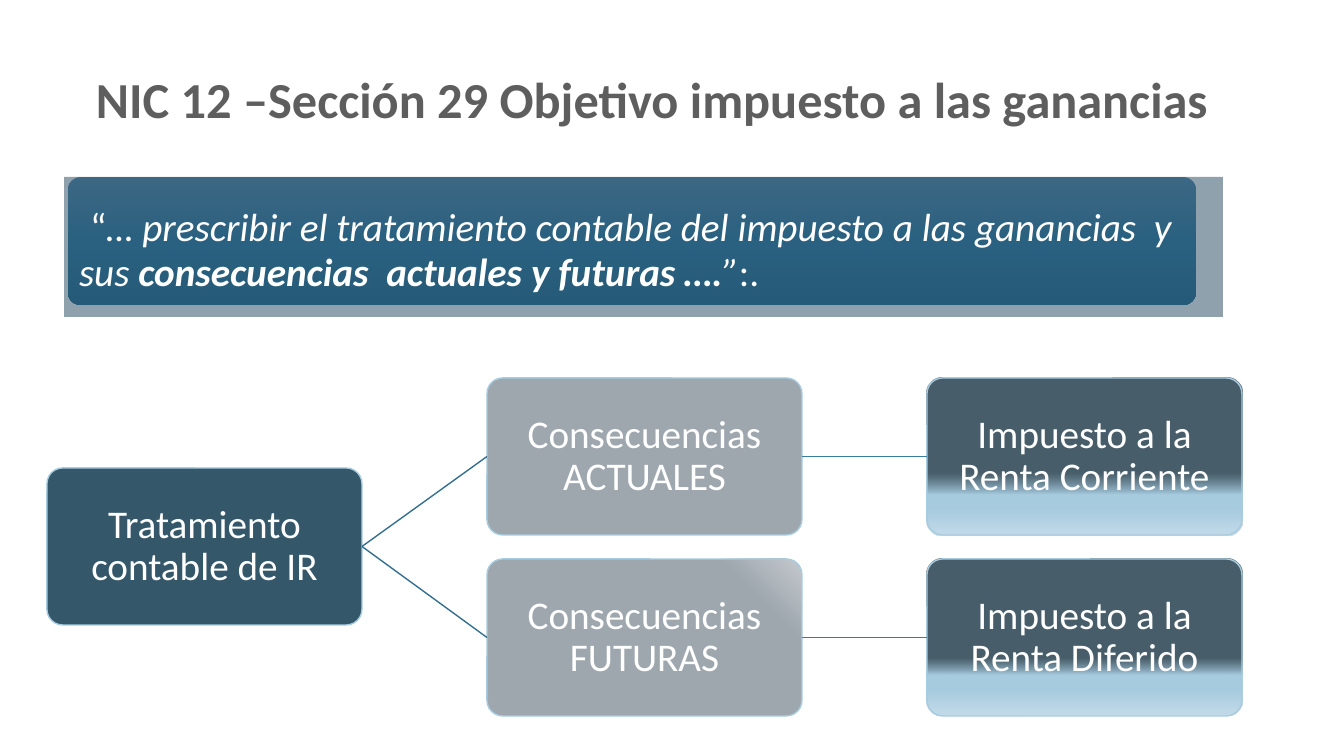
import pptx
import pptx.dml.color
import pptx.enum.shapes
import pptx.enum.text
import pptx.oxml
import pptx.oxml.ns
import pptx.util

PX = 12192000 / 1344  # EMU in one px
THEME = {
    "font": "Calibri",
    "title_size": 36, "lead_size": 35, "body_size": 28,
    "title": "5E5E5E", "white": "FFFFFF",
    "border": "A7CBDF", "branch": "346F8F", "link": "3B7DA2",
    # Fills: stops of (percent, colour, opacity percent)
    "root": [(0, "20455A", 90)],
    "overlay": [(0, "20455A", 50)],
    "banner": [(0, "5A8CAE", 100), (50, "367EA7", 100), (100, "2B7299", 100)],
    "current": [(0, "9EA6AE", 100)],
    "future": [(82, "9EA6AE", 100), (100, "C4C9CD", 100)],
    "current_tax": [(60, "183342", 79), (74, "A7CBDF", 100), (83, "A7CBDF", 100), (100, "C4DCEA", 100)],
    "deferred_tax": [(63, "183342", 79), (74, "A7CBDF", 100), (83, "A7CBDF", 100), (100, "C4DCEA", 100)],
}
ROUNDED = pptx.enum.shapes.MSO_SHAPE.ROUNDED_RECTANGLE
RECTANGLE = pptx.enum.shapes.MSO_SHAPE.RECTANGLE
LEFT, CENTER = pptx.enum.text.PP_ALIGN.LEFT, pptx.enum.text.PP_ALIGN.CENTER


def write_text(shape, *runs, size=THEME["body_size"], color=THEME["white"],
               bold=False, align=LEFT, inset_x=10, inset_y=5):
    """Write one paragraph; each run is (text, font overrides)."""
    frame = shape.text_frame
    frame.word_wrap = True
    frame.vertical_anchor = pptx.enum.text.MSO_ANCHOR.MIDDLE
    frame.margin_left = frame.margin_right = round(inset_x * PX)
    frame.margin_top = frame.margin_bottom = round(inset_y * PX)
    paragraph = frame.paragraphs[0]
    paragraph.alignment = align
    paragraph.line_spacing = 0.9
    for text, overrides in runs:
        run = paragraph.add_run()
        run.text = text
        run.font.name = THEME["font"]
        run.font.size = pptx.util.Pt(overrides.get("size", size))
        run.font.bold = overrides.get("bold", bold)
        run.font.italic = overrides.get("italic", False)
        run.font.color.rgb = pptx.dml.color.RGBColor.from_string(color)


def add_panel(kind, left, top, width, height, stops, angle=90, border=None):
    """Add a shape with a solid (one stop) or gradient fill."""
    shape = slide.shapes.add_shape(kind, *[round(v * PX) for v in (left, top, width, height)])
    shape.shadow.inherit = False
    if kind == ROUNDED:
        shape.adjustments[0] = 0.1
    colors = [f'<a:srgbClr val="{color}"><a:alpha val="{opacity * 1000}"/></a:srgbClr>'
              for _, color, opacity in stops]
    namespace = pptx.oxml.ns.nsdecls("a")
    if len(stops) == 1:
        xml = f"<a:solidFill {namespace}>{colors[0]}</a:solidFill>"
    else:
        marks = "".join(f'<a:gs pos="{stop[0] * 1000}">{color}</a:gs>'
                        for stop, color in zip(stops, colors))
        xml = (f'<a:gradFill {namespace} rotWithShape="1"><a:gsLst>{marks}</a:gsLst>'
               f'<a:lin ang="{angle * 60000}" scaled="0"/></a:gradFill>')
    geometry = shape.element.spPr.find(pptx.oxml.ns.qn("a:prstGeom"))
    geometry.addnext(pptx.oxml.parse_xml(xml))
    if border:
        shape.line.color.rgb = pptx.dml.color.RGBColor.from_string(border)
        shape.line.width = pptx.util.Pt(1)
    else:
        shape.line.fill.background()
    return shape


presentation = pptx.Presentation()
presentation.slide_width = round(1344 * PX)
presentation.slide_height = round(756 * PX)
slide = presentation.slides.add_slide(presentation.slide_layouts[6])

# Title
title = slide.shapes.add_textbox(*[round(v * PX) for v in (86, 38, 1159, 128)])
write_text(title, ("NIC 12 –Sección 29 Objetivo impuesto a las ganancias", {}),
           size=THEME["title_size"], color=THEME["title"], bold=True)

# Tree: three columns, two rows, root halfway between the rows
BOX_WIDTH, BOX_HEIGHT = 315, 157
COLUMNS = [47 + 440 * column for column in range(3)]
ROWS = [378, 559]
ROOT_TOP = sum(ROWS) // 2
boxes = [
    ("Tratamiento contable de IR", COLUMNS[0], ROOT_TOP, "root", 90),
    ("Consecuencias ACTUALES", COLUMNS[1], ROWS[0], "current", 315),
    ("Impuesto a la Renta Corriente", COLUMNS[2], ROWS[0], "current_tax", 90),
    ("Consecuencias FUTURAS", COLUMNS[1], ROWS[1], "future", 315),
    ("Impuesto a la Renta Diferido", COLUMNS[2], ROWS[1], "deferred_tax", 90),
]
for label, left, top, fill, angle in boxes:
    box = add_panel(ROUNDED, left, top, BOX_WIDTH, BOX_HEIGHT, THEME[fill], angle, THEME["border"])
    write_text(box, (label, {}), align=CENTER, inset_x=7, inset_y=7)

# Lines from the root to each row, and along each row
for row in ROWS:
    for column, start_top, color in [(0, ROOT_TOP, "branch"), (1, row, "link")]:
        ends = (COLUMNS[column] + BOX_WIDTH, start_top + BOX_HEIGHT / 2,
                COLUMNS[column + 1], row + BOX_HEIGHT / 2)
        line = slide.shapes.add_connector(pptx.enum.shapes.MSO_CONNECTOR.STRAIGHT,
                                          *[round(v * PX) for v in ends])
        line.line.color.rgb = pptx.dml.color.RGBColor.from_string(THEME[color])
        line.line.width = pptx.util.Pt(1)
        line.element.spPr.append(pptx.oxml.parse_xml(
            f'<a:effectLst {pptx.oxml.ns.nsdecls("a")}/>'))

# Quotation banner under a translucent panel that holds the text
add_panel(ROUNDED, 68, 177, 1128, 128, THEME["banner"])
quote = add_panel(RECTANGLE, 64, 177, 1159, 140, THEME["overlay"])
write_text(
    quote,
    (" ", {"size": THEME["lead_size"]}),
    ("“", {}),
    ("… prescribir el tratamiento contable del impuesto a las ganancias  y sus ", {"italic": True}),
    ("consecuencias  actuales y futuras ….", {"italic": True, "bold": True}),
    ("”", {"italic": True}),
    (":.", {}),
    inset_x=15, inset_y=15)

presentation.save("out.pptx")
